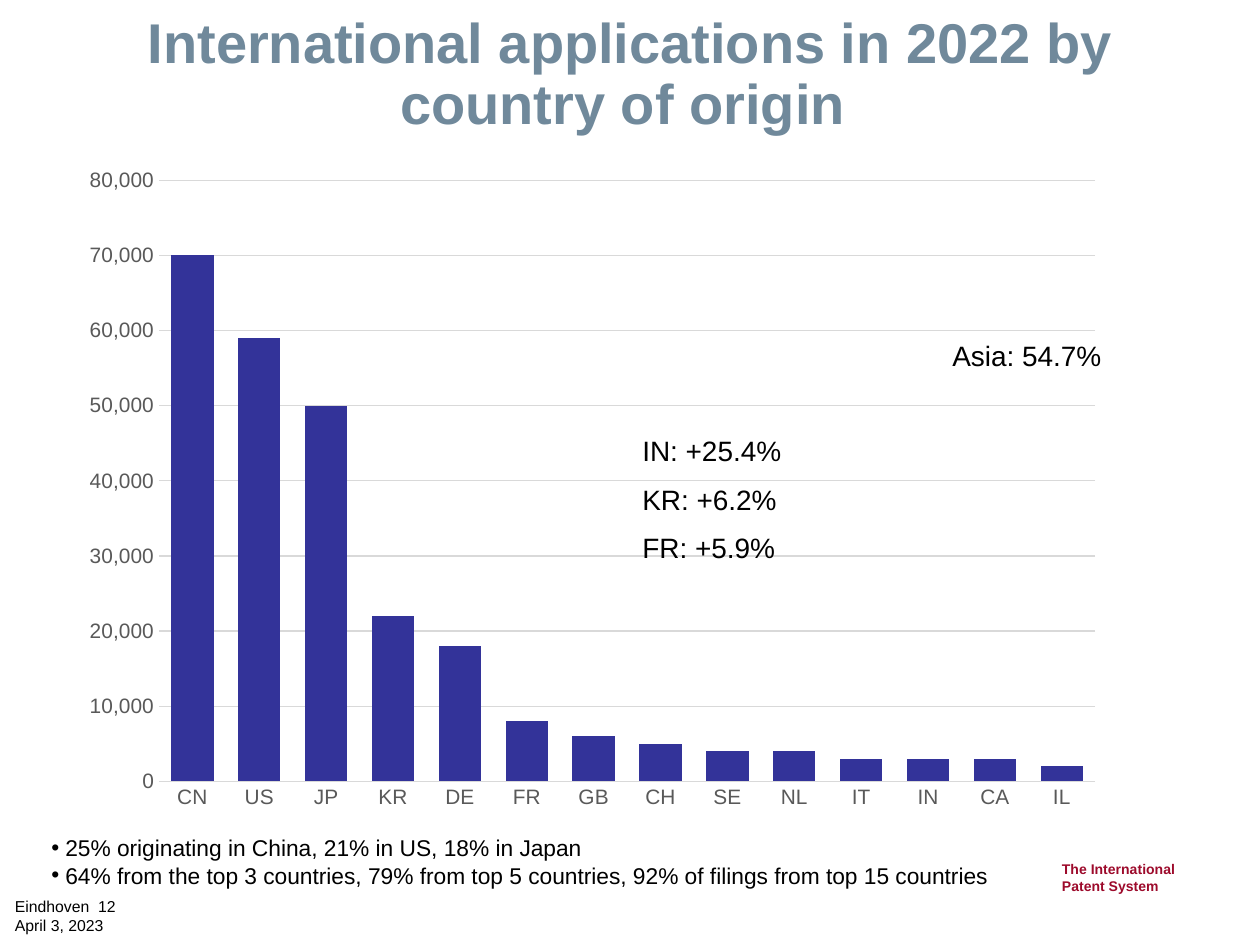
from lxml import etree
from pptx import Presentation
from pptx.chart.data import CategoryChartData
from pptx.dml.color import RGBColor
from pptx.enum.chart import XL_CHART_TYPE, XL_TICK_MARK
from pptx.enum.text import MSO_ANCHOR, PP_ALIGN
from pptx.oxml import parse_xml
from pptx.oxml.ns import nsdecls, qn
from pptx.util import Inches, Pt

COLUMN = XL_CHART_TYPE.COLUMN_CLUSTERED
NO_TICK = XL_TICK_MARK.NONE
TOP, MIDDLE = MSO_ANCHOR.TOP, MSO_ANCHOR.MIDDLE
LEFT, CENTER = PP_ALIGN.LEFT, PP_ALIGN.CENTER

BLACK = RGBColor(0x00, 0x00, 0x00)
SLATE = RGBColor(0x70, 0x89, 0x9B)
CRIMSON = RGBColor(0x9D, 0x0A, 0x2B)
INDIGO = RGBColor(0x33, 0x33, 0x99)
GRAY = RGBColor(0x59, 0x59, 0x59)
LIGHT_GRAY = RGBColor(0xD9, 0xD9, 0xD9)

prs = Presentation()
prs.slide_width, prs.slide_height = Inches(10), Inches(7.5)
s = prs.slides.add_slide(prs.slide_layouts[6])


def set_font(font, size, color, bold=False):
    fmt = {"name": "Arial", "size": Pt(size), "bold": bold}
    for name, value in fmt.items():
        setattr(font, name, value)
    font.color.rgb = color


def add_text(box, lines, size, color=BLACK, bold=False, wrap=True,
             anchor=TOP, align=LEFT, gap=0, spacing=1.0, indent=0, bullet=False):
    tf = s.shapes.add_textbox(*[Inches(v) for v in box]).text_frame
    tf.word_wrap = wrap
    tf.vertical_anchor = anchor
    for i, line in enumerate(lines):
        p = tf.paragraphs[0] if i == 0 else tf.add_paragraph()
        p.text = line
        p.alignment = align
        p.line_spacing = spacing
        if i and gap:
            p.space_before = Pt(gap)
        pPr = p._p.get_or_add_pPr()
        if indent:
            pPr.set("marL", str(Inches(indent)))
        if bullet:
            pPr.set("indent", str(-Inches(indent)))
            etree.SubElement(pPr, qn("a:buFont")).set("typeface", "Arial")
            etree.SubElement(pPr, qn("a:buChar")).set("char", "•")
        for r in p.runs:
            set_font(r.font, size, color, bold)


add_text((0.02, 7.07, 1.02, 0.4), ["Eindhoven  12", "April 3, 2023"], 9, wrap=False)
add_text((8.33, 6.78, 1.56, 0.33), ["The International \vPatent System"], 8,
         CRIMSON, bold=True)
add_text((0.2, -0.19, 9.61, 1.58),
         ["International applications in 2022 by country of origin "], 32, SLATE,
         bold=True, anchor=MIDDLE, align=CENTER, spacing=0.9)
add_text((0.31, 6.57, 8.19, 0.54),
         ["25% originating in China, 21% in US, 18% in Japan",
          "64% from the top 3 countries, 79% from top 5 countries, "
          "92% of filings from top 15 countries"],
         13, indent=0.11, bullet=True)
add_text((7.46, 2.64, 3.11, 0.64), ["Asia: 54.7%"], 16)

filings = {"CN": 70000, "US": 59000, "JP": 50000, "KR": 22000, "DE": 18000,
           "FR": 8000, "GB": 6000, "CH": 5000, "SE": 4000, "NL": 4000,
           "IT": 3000, "IN": 3000, "CA": 3000, "IL": 2000}
data = CategoryChartData(number_format="#,##0")
data.categories = list(filings)
data.add_series("Series 1", list(filings.values()))
chart = s.shapes.add_chart(COLUMN, Inches(0.51), Inches(1.22), Inches(8.35),
                           Inches(5.3), data).chart
chart.has_legend = False
chart.has_title = False
set_font(chart.font, 10, BLACK)

plot = chart.plots[0]
plot.gap_width = 58
plot.vary_by_categories = False
fill = plot.series[0].format.fill
fill.solid()
fill.fore_color.rgb = INDIGO

cat, val = chart.category_axis, chart.value_axis
for axis in (cat, val):
    axis.major_tick_mark = NO_TICK
    axis.minor_tick_mark = NO_TICK
    set_font(axis.tick_labels.font, 11.9, GRAY)
val.minimum_scale, val.maximum_scale, val.major_unit = 0, 80000, 10000
val.tick_labels.number_format = "#,##0"
val.tick_labels.number_format_is_linked = False
val.format.line.fill.background()
for line in (cat.format.line, val.major_gridlines.format.line):
    line.color.rgb = LIGHT_GRAY
    line.width = Pt(0.75)

area = chart._chartSpace.chart.plotArea
for old in area.findall(qn("c:layout")):
    area.remove(old)
area.insert(0, parse_xml(
    f'<c:layout {nsdecls("c")}><c:manualLayout><c:layoutTarget val="inner"/>'
    '<c:xMode val="edge"/><c:yMode val="edge"/><c:x val="0.09"/><c:y val="0.04"/>'
    '<c:w val="0.89"/><c:h val="0.9"/></c:manualLayout></c:layout>'))

add_text((4.99, 3.39, 1.97, 1.18), ["IN: +25.4%", "KR: +6.2%", "FR: +5.9%"], 16,
         gap=8.7, indent=0.01)

prs.save("out.pptx")
